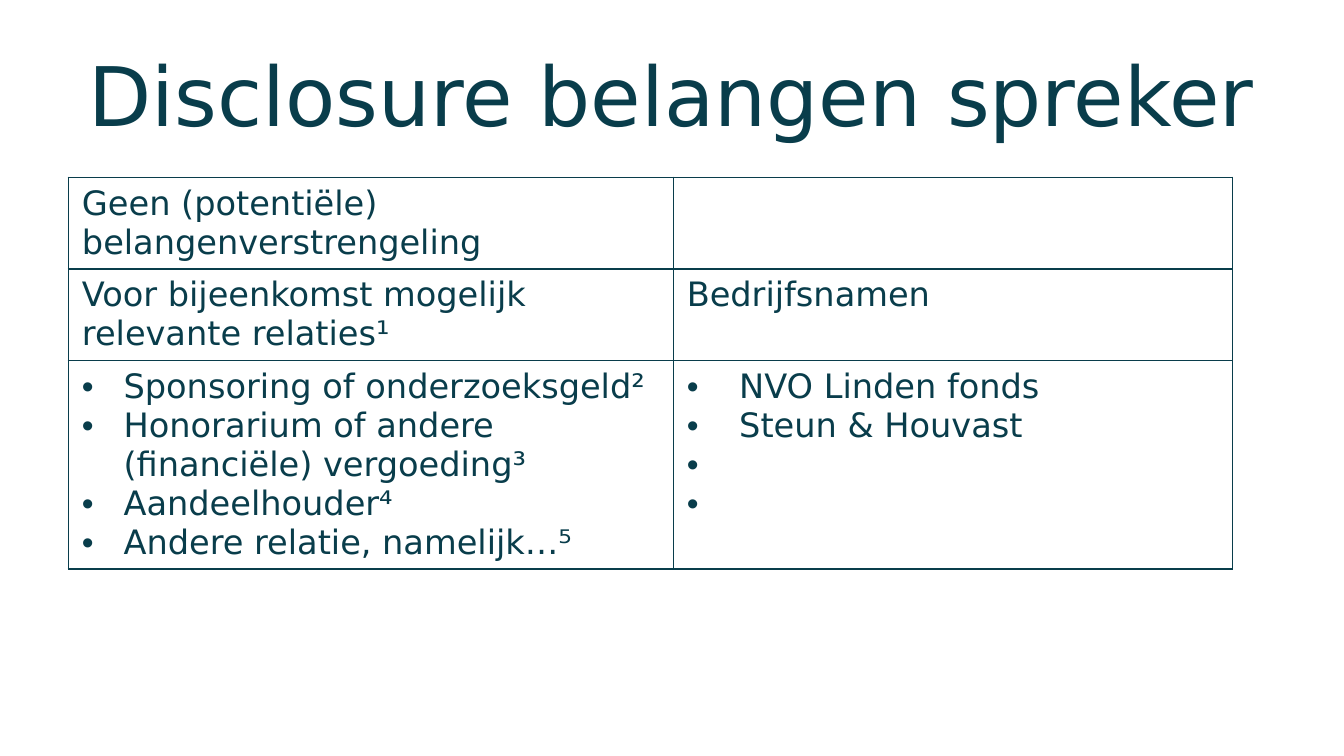
from lxml.etree import SubElement
from pptx import Presentation
from pptx.dml.color import RGBColor
from pptx.enum.text import MSO_ANCHOR, PP_ALIGN
from pptx.oxml import parse_xml
from pptx.oxml.ns import nsdecls, qn
from pptx.util import Inches, Pt

INK = "093D4B"
FONT = "DejaVu Sans"
WIDTH = 10
COLS = [4.5, 4.16]
ROWS = [0.68, 0.68, 1.55]
CELLS = [
    [["Geen (potentiële)", "belangenverstrengeling"], []],
    [["Voor bijeenkomst mogelijk", "relevante relaties¹"], ["Bedrijfsnamen"]],
    [["Sponsoring of onderzoeksgeld²",
      "Honorarium of andere (financiële) vergoeding³",
      "Aandeelhouder⁴", "Andere relatie, namelijk…⁵"],
     ["NVO Linden fonds", "Steun & Houvast", " ", " "]],
]
INDENTS = [0.31, 0.39]


def color(code):
    """Turn a hex string into a colour."""
    return RGBColor.from_string(code)


def bullet(para, indent):
    """Give a paragraph a hanging bullet."""
    props = para._p.get_or_add_pPr()
    props.set("marL", str(Inches(indent)))
    props.set("indent", str(-Inches(indent)))
    SubElement(props, qn("a:buFont"), typeface="Arial")
    SubElement(props, qn("a:buChar"), char="•")


def write(frame, lines, size=18, ink=INK, align=PP_ALIGN.LEFT, indent=None):
    """Fill a text frame with one paragraph per line."""
    for i, line in enumerate(lines):
        para = frame.add_paragraph() if i else frame.paragraphs[0]
        para.alignment = align
        if indent:
            bullet(para, indent)
        run = para.add_run()
        run.text = line
        run.font.size = Pt(size)
        run.font.name = FONT
        run.font.color.rgb = color(ink)


def border(cell, ink=INK, width=1):
    """Draw a line on all four sides of a cell."""
    props = cell._tc.get_or_add_tcPr()
    for i, side in enumerate(["lnL", "lnR", "lnT", "lnB"]):
        line = parse_xml(
            f'<a:{side} {nsdecls("a")} w="{Pt(width)}"><a:solidFill>'
            f'<a:srgbClr val="{ink}"/></a:solidFill></a:{side}>')
        props.insert(i, line)


def add_title(slide, text):
    """Place and format the slide title."""
    title = slide.shapes.title
    title.left, title.top = Inches(0.5), Inches(0.23)
    title.width, title.height = Inches(9), Inches(0.94)
    title.text_frame.vertical_anchor = MSO_ANCHOR.MIDDLE
    write(title.text_frame, [text], size=44, align=PP_ALIGN.CENTER)


def add_grid(slide):
    """Add the table of relations and company names."""
    table = slide.shapes.add_table(
        len(ROWS), len(COLS), Inches(0.51), Inches(1.32),
        Inches(sum(COLS)), Inches(sum(ROWS))).table
    table.first_row = table.horz_banding = False
    for col, width in zip(table.columns, COLS):
        col.width = Inches(width)
    for r, (height, cells) in enumerate(zip(ROWS, CELLS)):
        table.rows[r].height = Inches(height)
        for c, lines in enumerate(cells):
            cell = table.cell(r, c)
            cell.fill.background()
            border(cell)
            last = r == len(ROWS) - 1
            write(cell.text_frame, lines, indent=INDENTS[c] if last else None)


def main():
    """Build and save the slide."""
    deck = Presentation()
    deck.slide_width = Inches(WIDTH)
    deck.slide_height = Inches(WIDTH * 9 / 16)
    slide = deck.slides.add_slide(deck.slide_layouts[5])
    add_title(slide, "Disclosure belangen spreker")
    add_grid(slide)
    deck.save("out.pptx")


if __name__ == "__main__":
    main()
